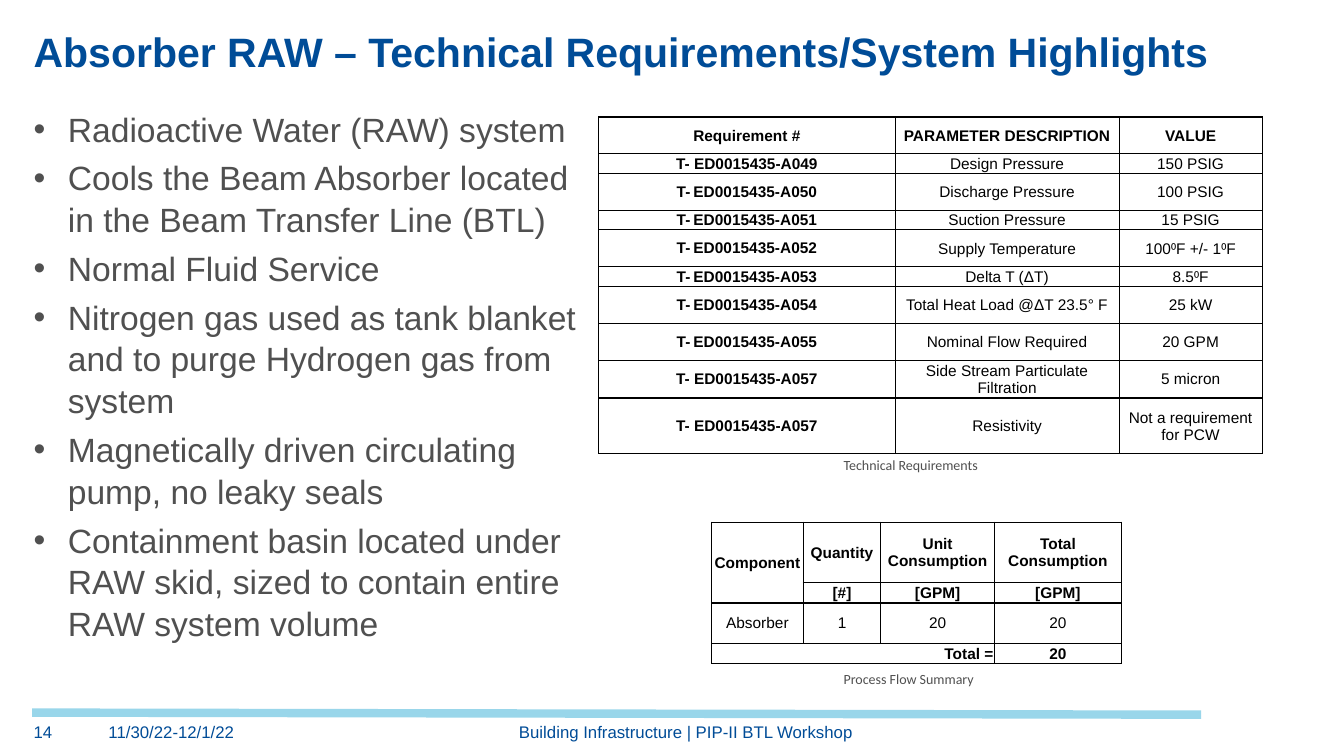
from lxml import etree
from pptx import Presentation
from pptx.dml.color import RGBColor
from pptx.enum.shapes import MSO_CONNECTOR
from pptx.enum.text import MSO_ANCHOR, PP_ALIGN
from pptx.oxml.ns import qn
from pptx.util import Pt

LEFT, MID, RIGHT = PP_ALIGN.LEFT, PP_ALIGN.CENTER, PP_ALIGN.RIGHT
MIDDLE, BOTTOM = MSO_ANCHOR.MIDDLE, MSO_ANCHOR.BOTTOM
COLORS = {"navy": "004C97", "gray": "505050", "sky": "99D6EA", "black": "000000"}


def style(font, size, color, bold=False, name="Arial"):
    font.size = Pt(size)
    font.name = name
    font.bold = bold
    font.color.rgb = RGBColor.from_string(COLORS[color])


def fill_cell(cell, text, bold, align=MID, sides="LRTB"):
    cell.margin_left = cell.margin_right = cell.margin_top = Pt(0.7)
    cell.margin_bottom = 0
    cell.vertical_anchor = MIDDLE
    para = cell.text_frame.paragraphs[0]
    para.alignment = align
    para.text = text
    for run in para.runs:
        style(run.font, 11, "black", bold)
    if not text:
        etree.SubElement(para._p, qn("a:endParaRPr"), sz="1100")
    # Borders go before the fill
    props = cell._tc.get_or_add_tcPr()
    for side in "LRTB":
        line = etree.SubElement(props, qn("a:ln" + side), w="12700")
        if side in sides:
            solid = etree.SubElement(line, qn("a:solidFill"))
            etree.SubElement(solid, qn("a:srgbClr"), val=COLORS["black"])
        else:
            etree.SubElement(line, qn("a:noFill"))
    cell.fill.background()


deck = Presentation()
deck.slide_width, deck.slide_height = Pt(960), Pt(540)
slide = deck.slides.add_slide(deck.slide_layouts[5])
shapes = slide.shapes

# Footer rule
rule = shapes.add_connector(MSO_CONNECTOR.STRAIGHT, Pt(23), Pt(509), Pt(858), Pt(510.5))
rule.line.width = Pt(6)
rule.line.color.rgb = RGBColor.from_string(COLORS["sky"])
etree.SubElement(rule._element.spPr, qn("a:effectLst"))

# Title
title = shapes.title
title.left, title.top, title.width, title.height = Pt(24), Pt(20), Pt(912), Pt(34)
frame = title.text_frame
frame.text = "Absorber RAW – Technical Requirements/System Highlights"
frame.margin_left = frame.margin_right = frame.margin_top = frame.margin_bottom = 0
frame.vertical_anchor = BOTTOM
frame.paragraphs[0].alignment = LEFT
style(frame.paragraphs[0].runs[0].font, 29.3, "navy", True)

# Bullet list
points = [
    "Radioactive Water (RAW) system",
    "Cools the Beam Absorber located in the Beam Transfer Line (BTL)",
    "Normal Fluid Service",
    "Nitrogen gas used as tank blanket and to purge Hydrogen gas from system",
    "Magnetically driven circulating pump, no leaky seals",
    "Containment basin located under RAW skid, sized to contain entire RAW system volume",
]
frame = shapes.add_textbox(Pt(24), Pt(76.5), Pt(388), Pt(398)).text_frame
frame.margin_left = frame.margin_right = frame.margin_top = frame.margin_bottom = 0
frame.word_wrap = True
for i, point in enumerate(points):
    para = frame.add_paragraph() if i else frame.paragraphs[0]
    para.text = point
    para.line_spacing = 1.04
    para.space_before = Pt(4.8 if i else 0)
    props = para._p.get_or_add_pPr()
    props.set("marL", str(Pt(24.5)))
    props.set("indent", str(-Pt(24.5)))
    etree.SubElement(props, qn("a:buFont"), typeface="Arial")
    etree.SubElement(props, qn("a:buChar"), char="•")
    style(para.runs[0].font, 24, "gray")

# Footer
footer = [
    ("14", 24, 43, LEFT),
    ("11/30/22-12/1/22", 77.5, 96, LEFT),
    ("Building Infrastructure | PIP-II BTL Workshop", 161.5, 657, MID),
]
for text, left, width, align in footer:
    frame = shapes.add_textbox(Pt(left), Pt(515.5), Pt(width), Pt(19)).text_frame
    frame.margin_left = frame.margin_right = frame.margin_top = frame.margin_bottom = 0
    frame.word_wrap = True
    frame.text = text
    frame.paragraphs[0].alignment = align
    style(frame.paragraphs[0].runs[0].font, 12, "navy")

# Table grids
needs = [
    ("Requirement #", "PARAMETER DESCRIPTION", "VALUE"),
    ("T- ED0015435-A049", "Design Pressure", "150 PSIG"),
    ("T- ED0015435-A050", "Discharge Pressure", "100 PSIG"),
    ("T- ED0015435-A051", "Suction Pressure", "15 PSIG"),
    ("T- ED0015435-A052", "Supply Temperature", "100⁰F +/- 1⁰F"),
    ("T- ED0015435-A053", "Delta T (ΔT)", "8.5⁰F"),
    ("T- ED0015435-A054", "Total Heat Load @ΔT 23.5° F", "25 kW"),
    ("T- ED0015435-A055", "Nominal Flow Required", "20 GPM"),
    ("T- ED0015435-A057", "Side Stream Particulate Filtration", "5 micron"),
    ("T- ED0015435-A057", "Resistivity", "Not a requirement for PCW"),
]
flows = [
    ("Component", "Quantity", "Unit Consumption", "Total Consumption"),
    ("", "[#]", "[GPM]", "[GPM]"),
    ("Absorber", "1", "20", "20"),
    ("", "", "Total =", "20"),
]
tall, low = 26.4, 13.8
need_rows = [tall, low, tall, low, tall, low, tall, tall, tall, 39.6]
grids = [
    (needs, 427.7, 83.5, [211.7, 160, 102.2], need_rows),
    (flows, 508.3, 373, [65.5, 55.4, 81.2, 90.7], [43, 14.8, 28.6, 14.8]),
]
tables = []
for data, left, top, widths, heights in grids:
    table = shapes.add_table(len(data), len(widths), Pt(left), Pt(top),
                             Pt(sum(widths)), Pt(sum(heights))).table
    table.first_row = table.horz_banding = False
    for col, width in zip(table.columns, widths):
        col.width = Pt(width)
    for row, height in zip(table.rows, heights):
        row.height = Pt(height)
    tables.append(table)
need_table, flow_table = tables

# Technical requirements
for r, row in enumerate(needs):
    for c, text in enumerate(row):
        fill_cell(need_table.cell(r, c), text, r == 0 or c == 0)
for r in range(2, 8):
    para = need_table.cell(r, 0).text_frame.paragraphs[0]
    para.text = ""
    for part in ("T-", " ", needs[r][0][3:]):
        run = para.add_run()
        run.text = part
        if part == " ":
            style(run.font, 10, "black", name="Cambria")
        else:
            style(run.font, 11, "black", True)

# Process flow, with an open total row
total_sides = ["LTB", "TB", "RTB", "LRTB"]
for r, row in enumerate(flows):
    for c, text in enumerate(row):
        align = RIGHT if text == "Total =" else MID
        sides = total_sides[c] if r == 3 else "LRTB"
        fill_cell(flow_table.cell(r, c), text, r != 2, align, sides)
flow_table.cell(0, 0).merge(flow_table.cell(1, 0))

# Captions
for text, top, width in [("Technical Requirements", 322.5, 113),
                         ("Process Flow Summary", 475.5, 109)]:
    frame = shapes.add_textbox(Pt(595.5), Pt(top), Pt(width), Pt(19.4)).text_frame
    frame.word_wrap = False
    frame.text = text
    style(frame.paragraphs[0].runs[0].font, 10, "gray", name="Calibri")

deck.save("out.pptx")
